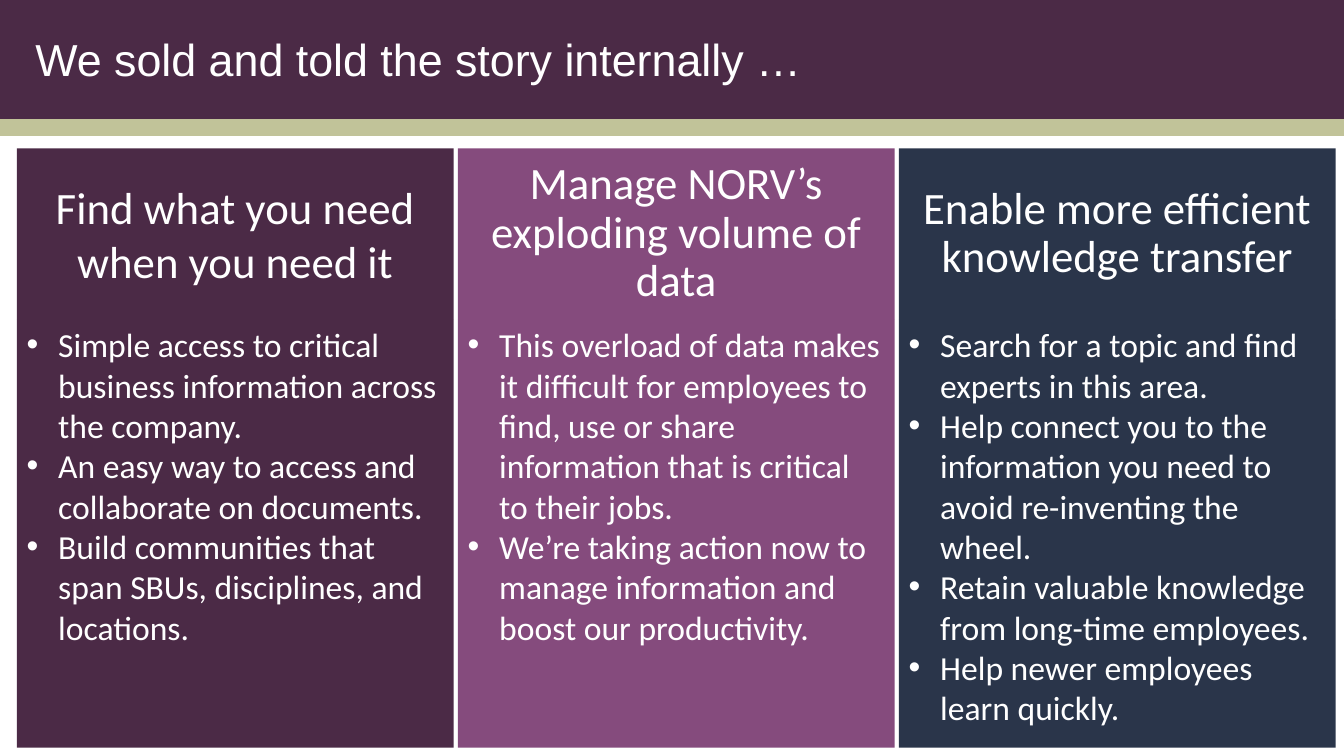
"""Builds the slide about telling the story internally, with three benefit columns."""
from dataclasses import dataclass

import pptx
import pptx.dml.color
import pptx.enum.shapes
import pptx.enum.text
import pptx.oxml
import pptx.oxml.ns
import pptx.util

Pt = pptx.util.Pt
Align = pptx.enum.text.PP_ALIGN
Anchor = pptx.enum.text.MSO_ANCHOR


@dataclass(frozen=True)
class Theme:
    plum: str = "4B2A46"
    orchid: str = "854B7D"
    navy: str = "2A354A"
    sage: str = "C1C399"
    white: str = "FFFFFF"
    title_font: str = "Arial"
    body_font: str = "Calibri"
    heading_size: float = 32
    list_size: float = 24
    bullet_indent: float = 22.5


class SlideBuilder:
    def __init__(self, slide, theme):
        self.slide = slide
        self.theme = theme

    def style(self, paragraph, font_name, size, align):
        paragraph.alignment = align
        paragraph.font.name = font_name
        paragraph.font.size = Pt(size)
        paragraph.font.color.rgb = pptx.dml.color.RGBColor.from_string(self.theme.white)

    def panel(self, left, top, width, height, color):
        panel = self.slide.shapes.add_shape(
            pptx.enum.shapes.MSO_SHAPE.RECTANGLE, Pt(left), Pt(top), Pt(width), Pt(height))
        panel.shadow.inherit = False
        panel.fill.solid()
        panel.fill.fore_color.rgb = pptx.dml.color.RGBColor.from_string(color)
        panel.line.fill.background()
        return panel

    def title(self, text, left, top, width, height):
        title = self.slide.shapes.title
        title.left, title.top, title.width, title.height = map(Pt, (left, top, width, height))
        title.text_frame.text = text
        title.text_frame.vertical_anchor = Anchor.MIDDLE
        self.style(title.text_frame.paragraphs[0], self.theme.title_font,
                   self.theme.heading_size, Align.LEFT)
        self.slide.shapes._spTree.append(title._element)

    def heading(self, text, left, top, width, height, color, line_spacing):
        frame = self.panel(left, top, width, height, color).text_frame
        frame.word_wrap = True
        frame.vertical_anchor = Anchor.MIDDLE
        frame.text = text
        frame.paragraphs[0].line_spacing = line_spacing
        self.style(frame.paragraphs[0], self.theme.body_font,
                   self.theme.heading_size, Align.CENTER)

    def bullets(self, points, left, top, width, height, color):
        frame = self.panel(left, top, width, height, color).text_frame
        frame.word_wrap = True
        frame.vertical_anchor = Anchor.TOP
        frame.text = "\n".join(points)
        indent = Pt(self.theme.bullet_indent)
        for paragraph in frame.paragraphs:
            properties = paragraph._p.get_or_add_pPr()
            properties.set("marL", str(indent))
            properties.set("indent", str(-indent))
            properties.append(pptx.oxml.parse_xml(
                f'<a:buFont {pptx.oxml.ns.nsdecls("a")} typeface="Arial"/>'))
            properties.append(pptx.oxml.parse_xml(
                f'<a:buChar {pptx.oxml.ns.nsdecls("a")} char="•"/>'))
            self.style(paragraph, self.theme.body_font, self.theme.list_size, Align.LEFT)


def main():
    theme = Theme()
    presentation = pptx.Presentation()
    presentation.slide_width, presentation.slide_height = Pt(960), Pt(540)
    title_only = presentation.slide_layouts[5]
    builder = SlideBuilder(presentation.slides.add_slide(title_only), theme)

    builder.panel(0, 0, 960, 90, theme.plum)
    builder.panel(0, 85, 960, 12, theme.sage)
    builder.title("We sold and told the story internally …", 18, 0, 864, 84)

    benefits = [
        ("Find what you need when you need it", theme.plum, 1.0, [
            "Simple access to critical business information across the company.",
            "An easy way to access and collaborate on documents.",
            "Build communities that span SBUs, disciplines, and locations."]),
        ("Manage NORV’s exploding volume of data", theme.orchid, 0.9, [
            "This overload of data makes it difficult for employees to find, use or share "
            "information that is critical to their jobs.",
            "We’re taking action now to manage information and boost our productivity."]),
        ("Enable more efficient knowledge transfer", theme.navy, 0.9, [
            "Search for a topic and find experts in this area.",
            "Help connect you to the information you need to avoid re-inventing the wheel.",
            "Retain valuable knowledge from long-time employees.",
            "Help newer employees learn quickly."]),
    ]
    first_left, pitch, width = 12, 315, 312
    top, heading_height, list_height = 106, 122, 306
    for column, (heading, color, line_spacing, points) in enumerate(benefits):
        left = first_left + column * pitch
        builder.heading(heading, left, top, width, heading_height, color, line_spacing)
        builder.bullets(points, left, top + heading_height, width, list_height, color)

    presentation.save("out.pptx")


if __name__ == "__main__":
    main()
